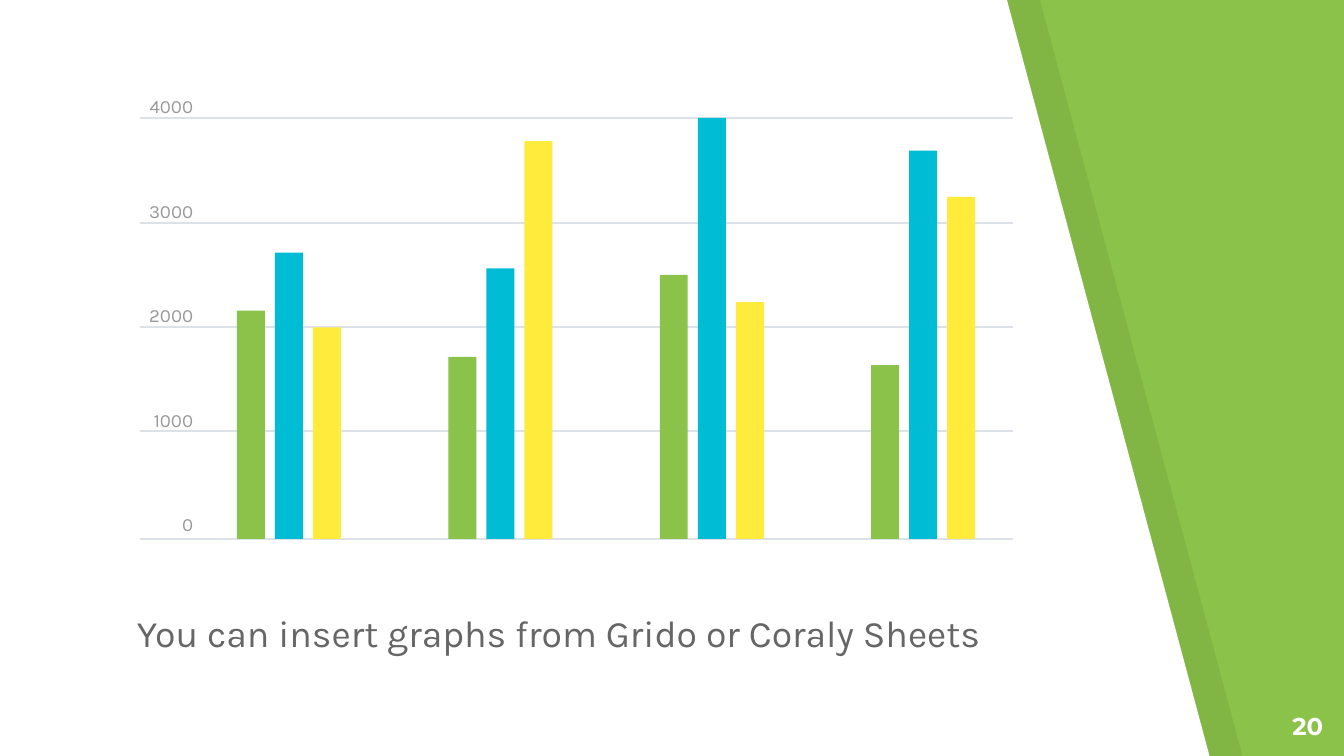
from lxml.etree import SubElement
from pptx import Presentation
from pptx.dml.color import RGBColor
from pptx.enum.shapes import MSO_CONNECTOR as Connector, MSO_SHAPE as Preset
from pptx.enum.text import MSO_ANCHOR as Anchor, PP_ALIGN as Align
from pptx.oxml.ns import qn
from pptx.util import Pt

PX = 914400 / 134.4
GREEN = RGBColor(0x8B, 0xC3, 0x4A)
CYAN = RGBColor(0x00, 0xBC, 0xD4)
YELLOW = RGBColor(0xFF, 0xEB, 0x3B)
BLACK = RGBColor(0, 0, 0)
WHITE = RGBColor(0xFF, 0xFF, 0xFF)
GRID = RGBColor(0xDC, 0xE2, 0xE7)
CAPTION_GREY = RGBColor(0x66, 0x66, 0x66)
LABEL_GREY = RGBColor(0x99, 0x99, 0x99)


def px(*lengths):
    return [round(length * PX) for length in lengths]


def write(holder, text, size, color, font="Karla", bold=False, align=Align.LEFT,
          anchor=Anchor.TOP, inset=13, before=0):
    frame = holder.text_frame
    frame.text = text
    frame.word_wrap = True
    frame.vertical_anchor = anchor
    margin = round(inset * PX)
    frame.margin_left = frame.margin_right = margin
    frame.margin_top = frame.margin_bottom = margin
    for paragraph in frame.paragraphs:
        paragraph.alignment = align
        paragraph.space_before = Pt(before)
        paragraph.font.size = Pt(size)
        paragraph.font.name = font
        paragraph.font.bold = bold
        paragraph.font.color.rgb = color


deck = Presentation()
deck.slide_width, deck.slide_height = px(1344, 756)
slide = deck.slides.add_slide(deck.slide_layouts.get_by_name("Content with Caption"))
slide.background.fill.solid()
slide.background.fill.fore_color.rgb = GREEN
shapes = slide.shapes
unused_title, unused_content, caption = slide.placeholders
for unused in (unused_title, unused_content):
    shapes.element.remove(unused.element)

for left, color, opacity in ((33, BLACK, 7), (0, WHITE, 100)):
    outline = shapes.build_freeform(left, -1, scale=PX)
    outline.add_line_segments([(left, 758), (left + 1210, 758), (left + 1007, 0)])
    panel = outline.convert_to_shape()
    panel.shadow.inherit = False
    panel.line.fill.background()
    panel.fill.solid()
    panel.fill.fore_color.rgb = color
    if opacity < 100:
        tint = panel.element.spPr.find(qn("a:solidFill"))[0]
        SubElement(tint, qn("a:alpha"), val=str(opacity * 1000))

shapes.element.append(caption.element)
caption.left, caption.top, caption.width, caption.height = px(124, 591, 1153, 77)
write(caption, "You can insert graphs from Grido or Coraly Sheets", 20, CAPTION_GREY,
      anchor=Anchor.BOTTOM, before=3.6)

page_number = shapes.add_textbox(*px(1255, 698, 81, 58))
write(page_number, "20", 13, WHITE, font="Montserrat", bold=True, align=Align.RIGHT)

for y in (118, 223, 327, 431, 539):
    gridline = shapes.add_connector(Connector.STRAIGHT, *px(140, y, 1013, y))
    gridline.line.color.rgb = GRID
    gridline.line.width = Pt(0.75)
    SubElement(gridline.element.spPr, qn("a:effectLst"))

scale_labels = shapes.add_textbox(*px(139, 95, 54, 445))
write(scale_labels, "4000\n3000\n2000\n1000\n0", 10, LABEL_GREY, align=Align.RIGHT,
      inset=0, before=44)

BASELINE, FULL_HEIGHT, FULL_VALUE = 539, 421, 4000
FIRST_LEFT, GROUP_STEP, BAR_STEP, BAR_WIDTH = 237, 211.4, 38, 28
GROUPS = (
    (2170, 2720, 2010),
    (1730, 2570, 3780),
    (2510, 4000, 2250),
    (1650, 3690, 3250),
)
for group, values in enumerate(GROUPS):
    for column, (value, color) in enumerate(zip(values, (GREEN, CYAN, YELLOW))):
        left = FIRST_LEFT + group * GROUP_STEP + column * BAR_STEP
        height = FULL_HEIGHT * value / FULL_VALUE
        bar = shapes.add_shape(Preset.RECTANGLE,
                               *px(left, BASELINE - height, BAR_WIDTH, height))
        bar.shadow.inherit = False
        bar.line.fill.background()
        bar.fill.solid()
        bar.fill.fore_color.rgb = color

deck.save("out.pptx")
